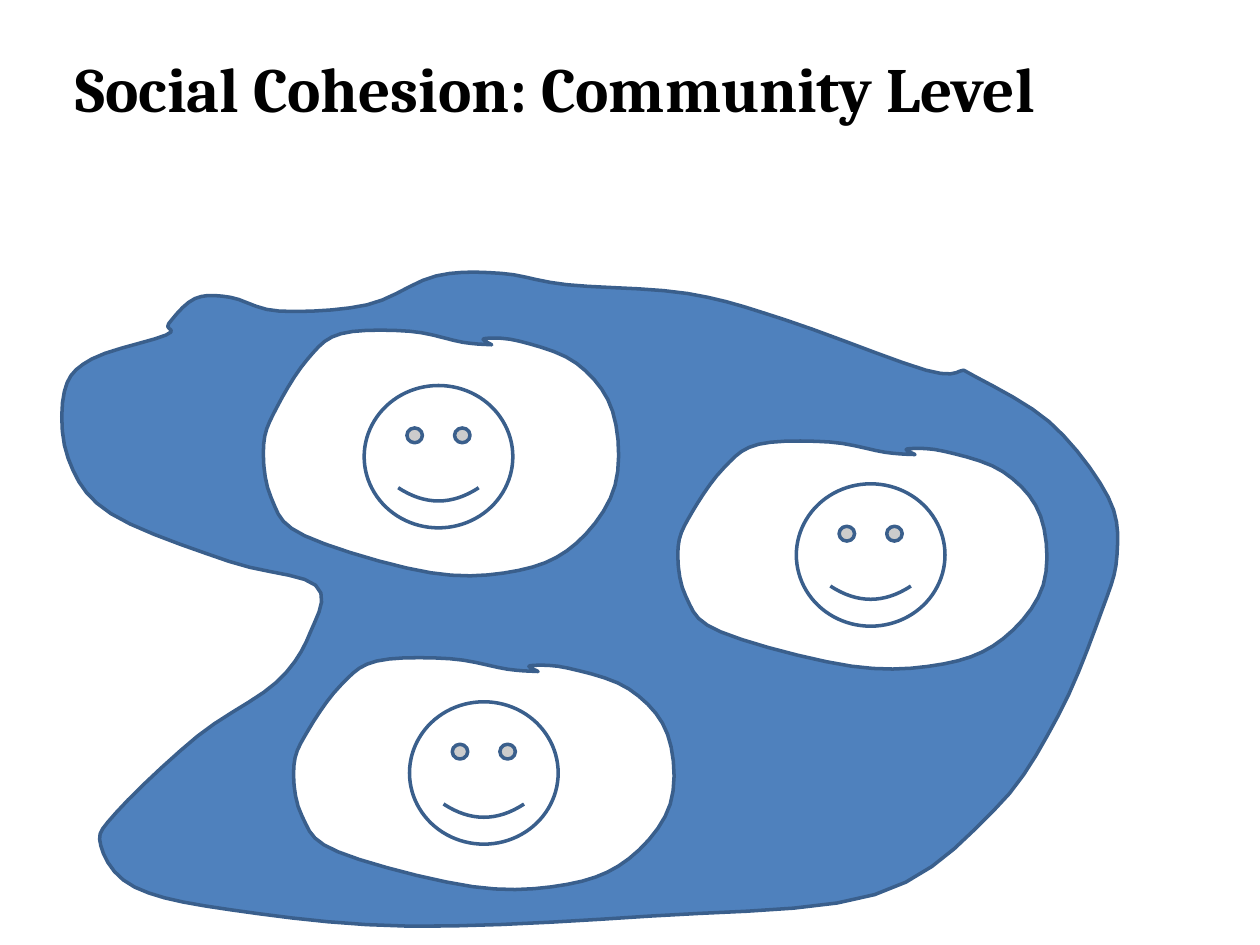
import pptx
import pptx.dml.color
import pptx.enum.shapes
import pptx.enum.text
import pptx.util

COLORS = {"ink": "000000", "community": "4F81BD", "line": "3A5F8C", "white": "FFFFFF"}
CELL = pptx.util.Inches(0.1)  # grid of 100 columns by 75 rows
FACE_SIZE = (11.8, 11.3)
STEPS = 5  # straight pieces between two outline points

# Outline points on the grid; each outline is scaled to the box it fills.
COMMUNITY = [
    (76.5, 29.3), (73.5, 29.3), (62.3, 25.3), (54.5, 23.2), (44.9, 22.5),
    (39.7, 21.6), (34.5, 21.8), (29, 24.1), (22, 24.6), (18.1, 23.5),
    (15.3, 23.6), (13.2, 25.6), (13, 26.5), (7.1, 28.4), (4.9, 31),
    (5.2, 36.3), (8.6, 40.7), (18, 44.5), (24.9, 46.4), (24.5, 50.1),
    (21.8, 54.1), (15.5, 58.4), (9, 64.5), (7.8, 67.1), (10.5, 70.4),
    (18.1, 72.2), (32.2, 73.5), (51.6, 72.7), (69.4, 71), (78.8, 64.4),
    (84, 56.8), (87.5, 48.4), (88.7, 44), (88, 39.4), (83.3, 33.4),
]
HOUSEHOLD = [
    (39.2, 27.3), (36.9, 27.1), (32.6, 26.2), (27.1, 26.4), (24.4, 28.5),
    (22, 32.3), (20.9, 35.4), (21.5, 39.7), (24.2, 42.8), (34.3, 45.8),
    (41.4, 45.6), (46, 43.4), (49.1, 38.7), (48.9, 32.7), (46, 28.8),
    (41.4, 27), (38.6, 26.8),
]


def rgb(name):
    return pptx.dml.color.RGBColor.from_string(COLORS[name])


def emu(*cells):
    return [int(n * CELL) for n in cells]


def add_text(slide, box, text, *, font="Cambria", size=36, bold=True, color="ink"):
    tf = slide.shapes.add_textbox(*emu(*box)).text_frame
    tf.word_wrap = True
    tf.vertical_anchor = pptx.enum.text.MSO_ANCHOR.MIDDLE
    r = tf.paragraphs[0].add_run()
    r.text = text
    r.font.name, r.font.size, r.font.bold = font, pptx.util.Pt(size), bold
    r.font.color.rgb = rgb(color)


def style(s, fill):
    s.shadow.inherit = False
    s.fill.solid()
    s.fill.fore_color.rgb = rgb(fill)
    s.line.color.rgb = rgb("line")
    s.line.width = pptx.util.Pt(2)


def smooth(points):
    """Return points on a Catmull-Rom curve that starts and ends in a corner."""
    ends = [points[0], *points, points[0], points[0]]
    curve = []
    for a, b, c, d in zip(ends, ends[1:], ends[2:], ends[3:]):
        for t in (step / STEPS for step in range(STEPS)):
            curve.append([
                q + t / 2 * (r - p + t * (2 * p - 5 * q + 4 * r - s
                                          + t * (3 * (q - r) + s - p)))
                for p, q, r, s in zip(a, b, c, d)])
    return curve


def add_outline(slide, box, points, fill):
    """Scale a closed, smoothed outline so that it fills the box."""
    left, top, width, height = emu(*box)
    xs, ys = zip(*smooth(points))
    x_scale = width / (max(xs) - min(xs))
    y_scale = height / (max(ys) - min(ys))
    placed = [(round(left + (x - min(xs)) * x_scale), round(top + (y - min(ys)) * y_scale))
              for x, y in zip(xs, ys)]
    builder = slide.shapes.build_freeform(*placed[0])
    builder.add_line_segments(placed[1:], close=True)
    style(builder.convert_to_shape(), fill)


def add_face(slide, left, top):
    s = slide.shapes.add_shape(pptx.enum.shapes.MSO_SHAPE.SMILEY_FACE,
                               *emu(left, top, *FACE_SIZE))
    style(s, "white")


def add_community(slide, box, households):
    """Draw the community with its households, each given as box and face offset."""
    add_outline(slide, box, COMMUNITY, "community")
    for home, (dx, dy) in households:
        add_outline(slide, home, HOUSEHOLD, "white")
        add_face(slide, home[0] + dx, home[1] + dy)


def main():
    prs = pptx.Presentation()
    prs.slide_width, prs.slide_height = emu(100, 75)
    slide = prs.slides.add_slide(prs.slide_layouts[6])
    add_text(slide, (5, 3, 95, 7.9), "Social Cohesion: Community Level")
    add_community(slide, (4.9, 21.6, 83.8, 51.9), [
        ((20.9, 26.2, 28.2, 19.5), (8, 4.4)),
        ((53.8, 35, 29.3, 18.1), (9.4, 3.4)),
        ((23.3, 52.2, 30.2, 18.4), (9.2, 3.5)),
    ])
    prs.save("out.pptx")


if __name__ == "__main__":
    main()
